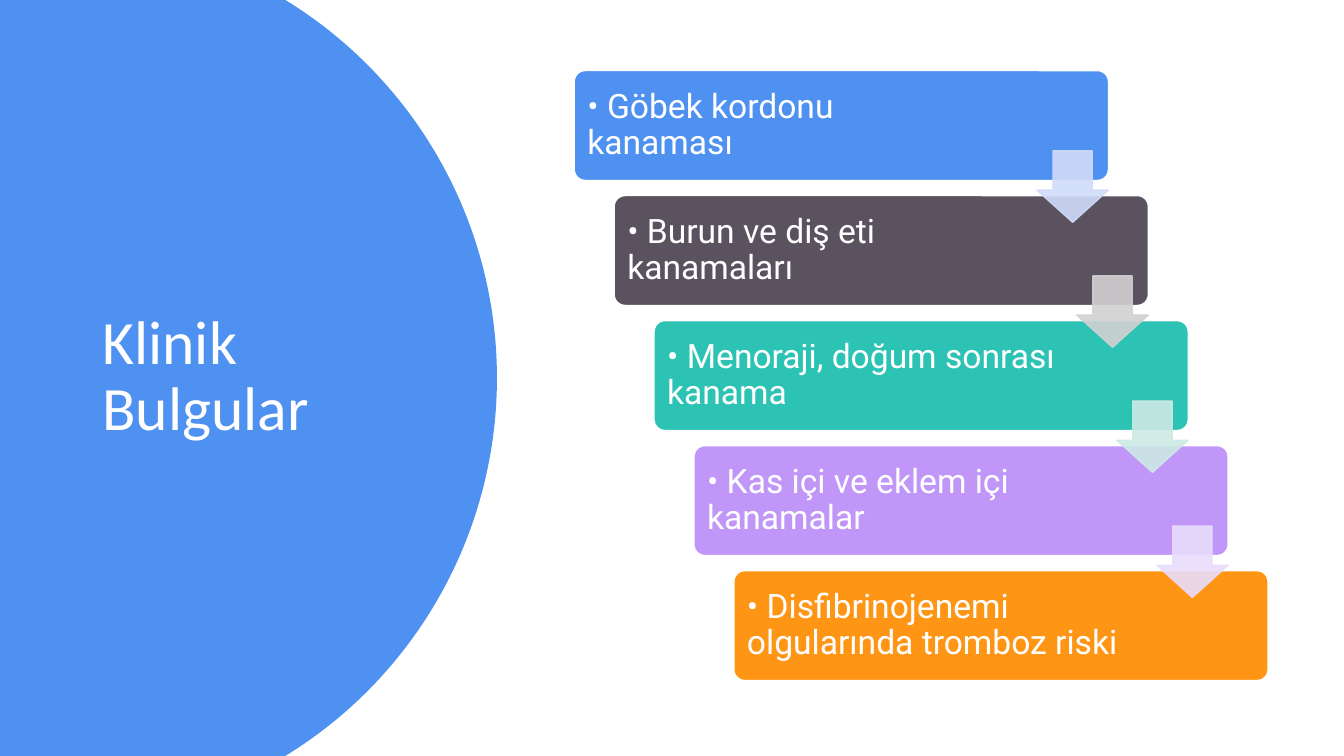
from dataclasses import dataclass
from math import asin, cos, sin

from lxml import etree
from pptx import Presentation
from pptx.dml.color import RGBColor
from pptx.enum.shapes import MSO_SHAPE
from pptx.enum.text import MSO_ANCHOR, MSO_AUTO_SIZE, PP_ALIGN
from pptx.oxml.ns import qn
from pptx.util import Pt

ROUNDED, DOWN_ARROW = MSO_SHAPE.ROUNDED_RECTANGLE, MSO_SHAPE.DOWN_ARROW
MIDDLE, LEFT, NO_FIT = MSO_ANCHOR.MIDDLE, PP_ALIGN.LEFT, MSO_AUTO_SIZE.NONE

# Content: finding, card colour, colour of the arrow to the next card, text width
TITLE = "Klinik Bulgular"
FINDINGS = [
    ("• Göbek kordonu kanaması", "4E91F0", "D0DCF9", 288),
    ("• Burun ve diş eti kanamaları", "5B5260", "D2D1D2", 297.4),
    ("• Menoraji, doğum sonrası kanama", "2CC3B4", "CDE9E5", 297.4),
    ("• Kas içi ve eklem içi kanamalar", "C097F8", "E8DDFC", 297.4),
    ("• Disfibrinojenemi olgularında tromboz riski", "FF9514", None, 297.4),
]


@dataclass(frozen=True)
class Theme:
    panel: str = "4E91F0"
    white: str = "FFFFFF"
    title_font: str = "Calibri"
    body_font: str = "Roboto"
    title_size: float = 44
    body_size: float = 24
    arrow_alpha: int = 90


THEME = Theme()

# Layout in points
SLIDE_WIDTH, SLIDE_HEIGHT = 960, 540
TITLE_BOX = (66, 50.4, 232.6, 438.5)
PANEL_CENTRE_X, PANEL_RADIUS, PANEL_SEGMENTS = 38.3, 316.7, 120
CARD_LEFT, CARD_TOP, CARD_WIDTH, CARD_HEIGHT = 410.2, 50.4, 381.6, 78.5
STEP_X, STEP_Y = 28.5, 89.3
ARROW_LEFT, ARROW_TOP, ARROW_SIZE = 740.7, 107.8, 51
INSET, CORNER_INSET = 7.2, 2.2


def paint(shape, fill, line=None, alpha=None):
    shape.shadow.inherit = False
    shape.fill.solid()
    shape.fill.fore_color.rgb = RGBColor.from_string(fill)
    if line is None:
        shape.line.fill.background()
    else:
        shape.line.width = Pt(1)
        shape.line.color.rgb = RGBColor.from_string(line)
    if alpha is not None:
        for color in shape._element.spPr.iter(qn("a:srgbClr")):
            etree.SubElement(color, qn("a:alpha"), val=str(alpha * 1000))


def write(shape, text, font, size):
    frame = shape.text_frame
    frame.word_wrap = True
    frame.auto_size = NO_FIT
    frame.vertical_anchor = MIDDLE
    paragraph = frame.paragraphs[0]
    paragraph.alignment = LEFT
    paragraph.line_spacing = 0.9
    run = paragraph.add_run()
    run.text = text
    run.font.name = font
    run.font.size = Pt(size)
    run.font.color.rgb = RGBColor.from_string(THEME.white)


def add_panel(slide):
    middle = SLIDE_HEIGHT / 2
    reach = asin(middle / PANEL_RADIUS)
    angles = [reach * (2 * i / PANEL_SEGMENTS - 1) for i in range(PANEL_SEGMENTS + 1)]
    arc = [(Pt(PANEL_CENTRE_X + PANEL_RADIUS * cos(angle)),
            Pt(middle + PANEL_RADIUS * sin(angle))) for angle in angles]
    builder = slide.shapes.build_freeform(0, 0)
    builder.add_line_segments(arc + [(0, Pt(SLIDE_HEIGHT))], close=True)
    paint(builder.convert_to_shape(), THEME.panel)


def add_title(slide):
    title = slide.shapes.title
    title.left, title.top, title.width, title.height = map(Pt, TITLE_BOX)
    write(title, TITLE, THEME.title_font, THEME.title_size)
    slide.shapes._spTree.append(title._element)  # in front of the panel


def add_card(slide, index, text, color, text_width):
    card = slide.shapes.add_shape(
        ROUNDED, Pt(CARD_LEFT + index * STEP_X), Pt(CARD_TOP + index * STEP_Y),
        Pt(CARD_WIDTH), Pt(CARD_HEIGHT))
    card.adjustments[0] = 0.1
    paint(card, color, THEME.white)
    frame = card.text_frame
    frame.margin_left = frame.margin_top = frame.margin_bottom = Pt(INSET)
    frame.margin_right = Pt(CARD_WIDTH - 2 * CORNER_INSET - text_width + INSET)
    write(card, text, THEME.body_font, THEME.body_size)


def add_arrow(slide, index, color):
    arrow = slide.shapes.add_shape(
        DOWN_ARROW, Pt(ARROW_LEFT + index * STEP_X), Pt(ARROW_TOP + index * STEP_Y),
        Pt(ARROW_SIZE), Pt(ARROW_SIZE))
    arrow.adjustments[0] = 0.55
    arrow.adjustments[1] = 0.45
    paint(arrow, color, color, THEME.arrow_alpha)


def main():
    presentation = Presentation()
    presentation.slide_width, presentation.slide_height = Pt(SLIDE_WIDTH), Pt(SLIDE_HEIGHT)
    slide = presentation.slides.add_slide(presentation.slide_layouts[5])

    # Blue panel and title
    add_panel(slide)
    add_title(slide)

    # Staircase of findings, then the arrows on top
    for index, (text, color, _, text_width) in enumerate(FINDINGS):
        add_card(slide, index, text, color, text_width)
    for index, (_, _, arrow_color, _) in enumerate(FINDINGS):
        if arrow_color:
            add_arrow(slide, index, arrow_color)

    presentation.save("out.pptx")


if __name__ == "__main__":
    main()
